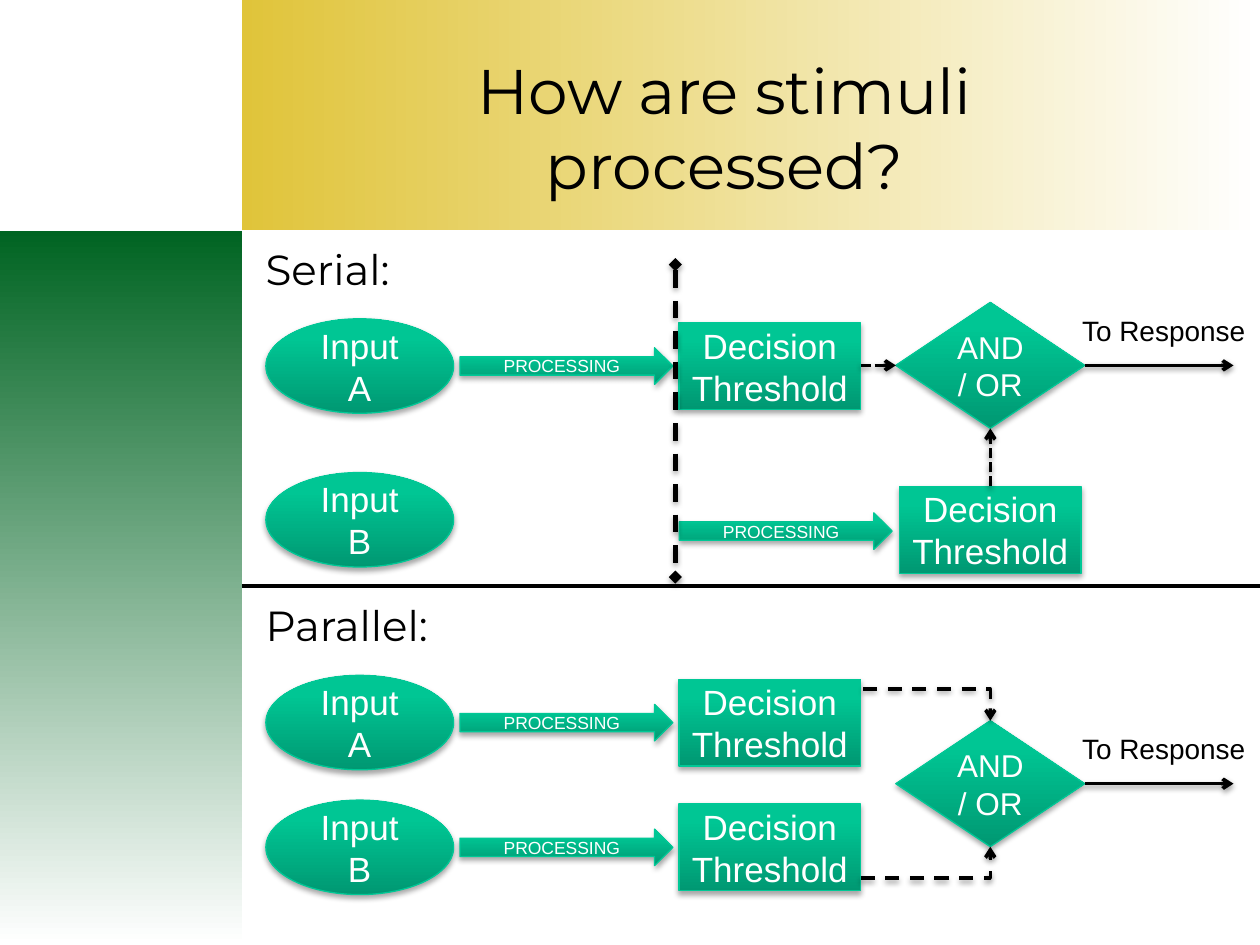
from lxml import etree
from pptx import Presentation
from pptx.dml.color import RGBColor
from pptx.enum.dml import MSO_LINE
from pptx.enum.shapes import MSO_CONNECTOR, MSO_SHAPE
from pptx.enum.text import MSO_ANCHOR, MSO_AUTO_SIZE, PP_ALIGN
from pptx.oxml.ns import qn
from pptx.util import Emu, Pt

PX = 9144  # 100 px to the inch
DASH, SHORT_DASH = MSO_LINE.DASH, MSO_LINE.SQUARE_DOT
STRAIGHT, ELBOW = MSO_CONNECTOR.STRAIGHT, MSO_CONNECTOR.ELBOW
CENTER, LEFT = PP_ALIGN.CENTER, PP_ALIGN.LEFT
RECTANGLE = MSO_SHAPE.RECTANGLE

# Kind of node: preset shape, width, height, font size
INPUT = (MSO_SHAPE.OVAL, 149, 75, 20)
PROCESSING = (MSO_SHAPE.RIGHT_ARROW, 169, 29, 10)
DECISION = (RECTANGLE, 144, 69, 20)
GATE = (MSO_SHAPE.DIAMOND, 150, 100, 18)

# Columns, measured from the left of a section
INPUT_X, PROCESSING_X, DECISION_X, GATE_X = 19, 173, 347, 519
GATE_MIDDLE, GATE_RIGHT = 594, 669


def px(*lengths):
    return [Emu(length * PX) for length in lengths]


def rgb(hex_color):
    return RGBColor.from_string(hex_color)


def write(frame, text, size, font="Arial", color="000000", align=LEFT):
    paragraph = frame.paragraphs[0]
    paragraph.alignment = align
    run = paragraph.add_run()
    run.text = text
    run.font.size = Pt(size)
    run.font.name = font
    run.font.color.rgb = rgb(color)


def fill_gradient(shape, start, end, angle, end_position=1):
    """Fill from start to end; the angle runs counter-clockwise."""
    shape.fill.gradient()
    shape.fill.gradient_angle = angle
    first, last = shape.fill.gradient_stops
    first.position, last.position = 0, end_position
    first.color.rgb, last.color.rgb = rgb(start), rgb(end)


def cast_shadow(effects, distance, opacity):
    shadow = etree.SubElement(effects, qn("a:outerShdw"), blurRad="40000",
                              dist=str(distance), dir="5400000", rotWithShape="0")
    black = etree.SubElement(shadow, qn("a:srgbClr"), val="000000")
    etree.SubElement(black, qn("a:alpha"), val=str(opacity * 1000))


def add_panel(slide, box, color, angle):
    panel = slide.shapes.add_shape(RECTANGLE, *px(*box))
    panel.shadow.inherit = False
    fill_gradient(panel, color, "FFFFFF", angle)
    panel.line.fill.background()


def add_node(slide, kind, x, middle, text):
    """Place a green node with its left edge at x, centred on middle."""
    preset, width, height, size = kind
    node = slide.shapes.add_shape(preset, *px(x, middle - height // 2, width, height))
    fill_gradient(node, "009872", "00C694", 90, end_position=0.8)
    node.line.color.rgb = rgb("00C896")
    node.line.width = Pt(0.75)
    node.shadow.inherit = False
    cast_shadow(node.element.spPr.find(qn("a:effectLst")), 23000, 35)
    node.text_frame.word_wrap = True
    node.text_frame.vertical_anchor = MSO_ANCHOR.MIDDLE
    write(node.text_frame, text, size, color="FFFFFF", align=CENTER)


def add_label(slide, box, text, size, font="Arial"):
    frame = slide.shapes.add_textbox(*px(*box)).text_frame
    frame.word_wrap = False
    frame.auto_size = MSO_AUTO_SIZE.SHAPE_TO_FIT_TEXT
    write(frame, text, size, font=font)


def add_line(slide, start, end, route=STRAIGHT, width=2, dash=None,
             head=None, tail="arrow", shadow=True):
    connector = slide.shapes.add_connector(route, *px(*start, *end))
    connector.line.color.rgb = rgb("000000")
    connector.line.width = Pt(width)
    if dash:
        connector.line.dash_style = dash
    properties = connector.element.spPr
    if route == ELBOW:
        properties.find(qn("a:prstGeom")).set("prst", "bentConnector2")
    for tag, tip in (("a:headEnd", head), ("a:tailEnd", tail)):
        if tip:
            etree.SubElement(properties.find(qn("a:ln")), qn(tag), type=tip)
    effects = etree.SubElement(properties, qn("a:effectLst"))
    if shadow:
        cast_shadow(effects, 20000, 38)


def add_title(slide, box, text):
    title = slide.shapes.title
    title.left, title.top, title.width, title.height = px(*box)
    frame = title.text_frame
    frame.word_wrap = True
    frame.auto_size = MSO_AUTO_SIZE.NONE
    frame.vertical_anchor = MSO_ANCHOR.MIDDLE
    write(frame, text, 36, font="Montserrat", align=CENTER)
    slide.shapes.element.append(title.element)  # in front of the panels


def add_stream(slide, left, middle, name):
    """Input, processing and decision in one row."""
    add_node(slide, INPUT, left + INPUT_X, middle, f"Input {name}")
    add_node(slide, PROCESSING, left + PROCESSING_X, middle, "PROCESSING")
    add_node(slide, DECISION, left + DECISION_X, middle, "Decision Threshold")


def add_gate(slide, left, middle):
    """AND / OR gate with its outgoing response."""
    add_node(slide, GATE, left + GATE_X, middle, "AND / OR")
    add_line(slide, (left + GATE_RIGHT, middle), (left + 787, middle))
    add_label(slide, (left + 657, middle - 46, 151, 37), "To Response", 16)


def add_serial(slide, left, top):
    first, second = top + 107, top + 238
    gate_middle = left + GATE_MIDDLE
    add_label(slide, (left + 9, top + 5, 138, 50), "Serial:", 24, "Montserrat")
    add_stream(slide, left, first, "A")
    add_gate(slide, left, first)
    add_node(slide, INPUT, left + INPUT_X, top + 229, "Input B")
    add_node(slide, PROCESSING, left + DECISION_X, second, "PROCESSING")
    add_node(slide, DECISION, left + 522, second - 1, "Decision Threshold")
    add_line(slide, (left + 344, top + 27), (left + 344, top + 275),
             width=2.5, dash=DASH, head="diamond", tail="diamond")
    add_line(slide, (left + 491, first), (left + GATE_X, first), dash=SHORT_DASH)
    add_line(slide, (gate_middle, top + 203), (gate_middle, first + 50), dash=SHORT_DASH)


def add_parallel(slide, left, top):
    gate = top + 157
    gate_middle = left + GATE_MIDDLE
    add_label(slide, (left + 9, top + 6, 172, 50), "Parallel:", 24, "Montserrat")
    add_stream(slide, left, top + 108, "A")
    add_stream(slide, left, top + 207, "B")
    add_gate(slide, left, gate)
    for start_x, side in ((493, -1), (491, 1)):
        add_line(slide, (left + start_x, gate + side * 75),
                 (gate_middle, gate + side * 50), route=ELBOW, dash=DASH)


def main():
    deck = Presentation()
    deck.slide_width, deck.slide_height = px(1000, 750)
    slide = deck.slides.add_slide(deck.slide_layouts.get_by_name("Title Only"))
    add_panel(slide, (192, 0, 808, 183), "E0C43A", 0)
    add_panel(slide, (0, 183, 192, 567), "006422", 270)
    add_title(slide, (225, 42, 700, 117), "How are stimuli processed?")
    add_line(slide, (192, 465), (1000, 465), tail=None, shadow=False)
    add_serial(slide, 192, 183)
    add_parallel(slide, 192, 465)
    deck.save("out.pptx")


if __name__ == "__main__":
    main()
